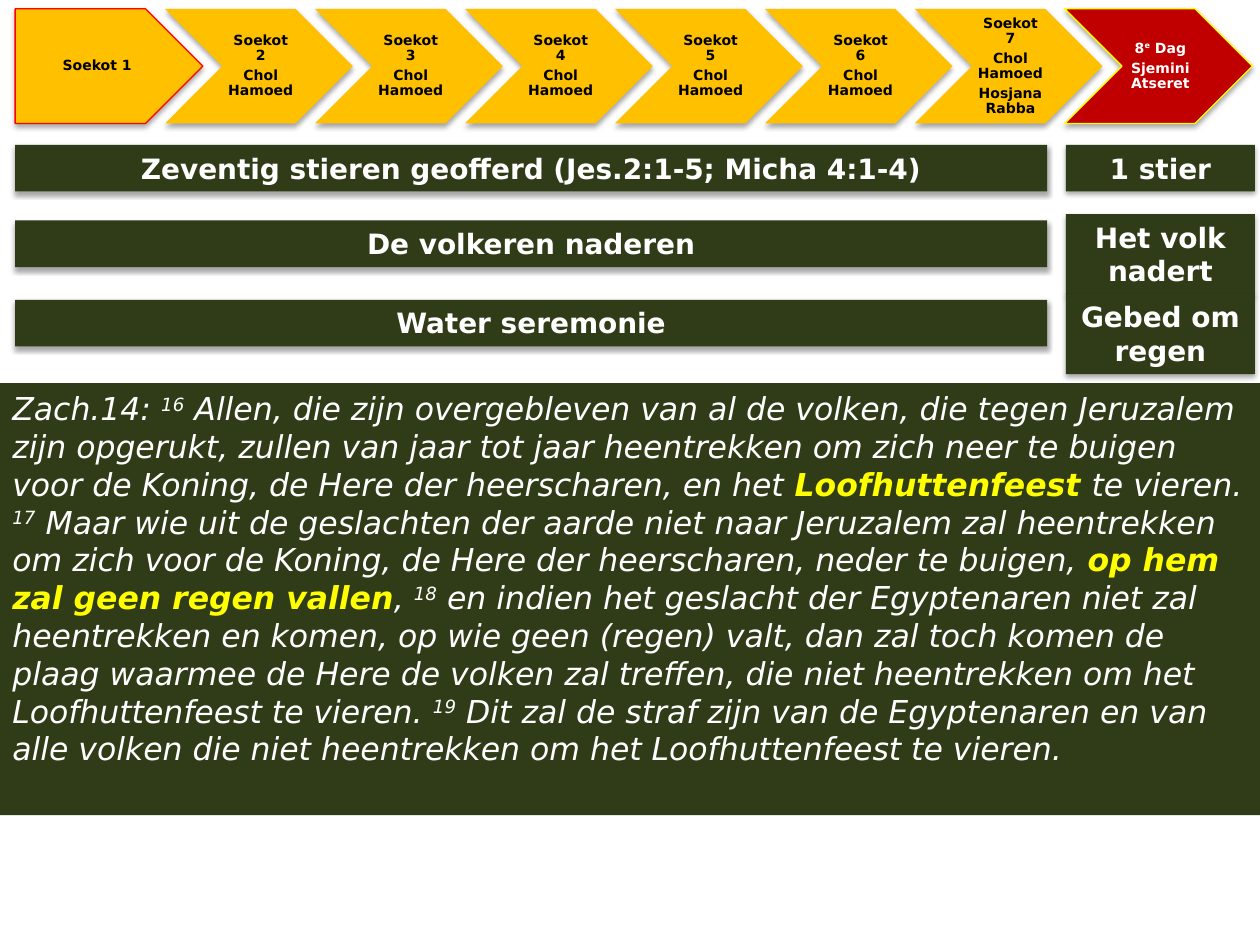
from dataclasses import dataclass

from lxml import etree
from pptx import Presentation
from pptx.dml.color import RGBColor
from pptx.enum.shapes import MSO_SHAPE as Shape
from pptx.enum.text import MSO_ANCHOR as Anchor, PP_ALIGN as Align
from pptx.oxml.ns import qn
from pptx.util import Inches, Pt


@dataclass(frozen=True)
class Theme:
    font: str = "DejaVu Sans"
    gold: str = "FFC000"
    crimson: str = "C00000"
    red: str = "FF0000"
    yellow: str = "FFFF00"
    olive: str = "303C18"
    white: str = "FFFFFF"
    black: str = "000000"
    day_size: int = 8
    bar_size: int = 16
    verse_size: int = 18


THEME = Theme()
MARGIN = 0.12
DAY_WIDTH, DAY_HEIGHT, DAY_STEP = 1.49, 0.91, 1.19
BAR_WIDTH = 8.19
SIDE_LEFT, SIDE_WIDTH = 8.46, 1.5

# Paragraphs of each feast day; a tuple holds runs, "^" marks a superscript run.
DAYS = [
    [("Soekot 1",)],
    *[[(f"Soekot {day}",), ("Chol Hamoed",)] for day in range(2, 7)],
    [("Soekot 7",), ("Chol Hamoed",), ("Hosjana Rabba",)],
    [("8", "^e", " Dag"), ("Sjemini Atseret",)],
]

# (top, height, text) for the seven days and for the eighth day
WEEK_BARS = [
    (1.15, 0.37, "Zeventig stieren geofferd (Jes.2:1-5; Micha 4:1-4)"),
    (1.75, 0.37, "De volkeren naderen"),
    (2.38, 0.37, "Water seremonie"),
]
EIGHTH_DAY_BARS = [
    (1.15, 0.37, "1 stier"),
    (1.7, 0.64, "Het volk nadert"),
    (2.33, 0.64, "Gebed om regen"),
]

# "^" marks a verse number, "*" a stressed passage
PROPHECY = [
    "Zach.14: ",
    "^16",
    " Allen, die zijn overgebleven van al de volken, die tegen Jeruzalem zijn "
    "opgerukt, zullen van jaar tot jaar heentrekken om zich neer te buigen voor "
    "de Koning, de Here der heerscharen, en het ",
    "*Loofhuttenfeest ",
    "te vieren. ",
    "^17",
    " Maar wie uit de geslachten der aarde niet naar Jeruzalem zal heentrekken "
    "om zich voor de Koning, de Here der heerscharen, neder te buigen, ",
    "*op hem zal geen regen vallen",
    ", ",
    "^18",
    " en indien het geslacht der Egyptenaren niet zal heentrekken en komen, op "
    "wie geen (regen) valt, dan zal toch komen de plaag waarmee de Here de volken "
    "zal treffen, die niet heentrekken om het Loofhuttenfeest te vieren. ",
    "^19",
    " Dit zal de straf zijn van de Egyptenaren en van alle volken die niet "
    "heentrekken om het Loofhuttenfeest te vieren.",
]


def add_soft_shadow(shape):
    effects = shape._element.spPr.find(qn("a:effectLst"))
    shadow = etree.SubElement(
        effects, qn("a:outerShdw"), blurRad=str(Pt(3.1)), dist=str(Pt(1.8)),
        dir="5400000", rotWithShape="0")
    color = etree.SubElement(shadow, qn("a:srgbClr"), val=THEME.black)
    etree.SubElement(color, qn("a:alpha"), val="35000")


def add_panel(slide, kind, box, fill, outline=None, shadow=True):
    panel = slide.shapes.add_shape(kind, *map(Inches, box))
    panel.fill.solid()
    panel.fill.fore_color.rgb = RGBColor.from_string(fill)
    if outline:
        panel.line.color.rgb = RGBColor.from_string(outline)
        panel.line.width = Pt(0.75)
    else:
        panel.line.fill.background()
    panel.shadow.inherit = False
    if shadow:
        add_soft_shadow(panel)
    panel.text_frame.word_wrap = True
    panel.text_frame.vertical_anchor = Anchor.TOP
    return panel


def add_run(paragraph, text, size, color, bold=False, italic=False):
    run = paragraph.add_run()
    run.text = text.lstrip("^*")
    font = run.font
    font.name, font.size = THEME.font, Pt(size)
    font.bold, font.italic = bold, italic
    font.color.rgb = RGBColor.from_string(color)
    if text.startswith("^"):
        run._r.get_or_add_rPr().set("baseline", "30000")


def add_day(slide, index, paragraphs):
    first, last = index == 0, index == len(DAYS) - 1
    outline = THEME.red if first else THEME.yellow if last else None
    arrow = add_panel(
        slide, Shape.PENTAGON if first else Shape.CHEVRON,
        (MARGIN + index * DAY_STEP, 0.07, DAY_WIDTH, DAY_HEIGHT),
        THEME.crimson if last else THEME.gold, outline)
    frame = arrow.text_frame
    frame.vertical_anchor = Anchor.MIDDLE
    frame.margin_left = Inches(0.05 if first else 0.04)
    frame.margin_right = Inches(0.01)
    frame.margin_top = frame.margin_bottom = Inches(0.02)
    for number, runs in enumerate(paragraphs):
        paragraph = frame.add_paragraph() if number else frame.paragraphs[0]
        paragraph.alignment = Align.CENTER
        paragraph.line_spacing = 0.9
        paragraph.space_after = Pt(2.8)
        for text in runs:
            add_run(paragraph, text, THEME.day_size,
                    THEME.white if last else THEME.black, bold=True)


def add_bar(slide, left, width, top, height, text):
    bar = add_panel(slide, Shape.RECTANGLE, (left, top, width, height), THEME.olive)
    paragraph = bar.text_frame.paragraphs[0]
    paragraph.alignment = Align.CENTER
    add_run(paragraph, text, THEME.bar_size, THEME.white, bold=True)


def add_prophecy(slide):
    panel = add_panel(slide, Shape.RECTANGLE, (0, 3.04, 10, 3.43),
                      THEME.olive, shadow=False)
    paragraph = panel.text_frame.paragraphs[0]
    paragraph.alignment = Align.LEFT
    for text in PROPHECY:
        stressed = text.startswith("*")
        add_run(paragraph, text, THEME.verse_size,
                THEME.yellow if stressed else THEME.white,
                bold=stressed, italic=True)


def main():
    deck = Presentation()
    deck.slide_width, deck.slide_height = Inches(10), Inches(7.5)
    slide = deck.slides.add_slide(deck.slide_layouts[6])
    for index, paragraphs in enumerate(DAYS):
        add_day(slide, index, paragraphs)
    for week_bar, eighth_day_bar in zip(WEEK_BARS, EIGHTH_DAY_BARS):
        add_bar(slide, MARGIN, BAR_WIDTH, *week_bar)
        add_bar(slide, SIDE_LEFT, SIDE_WIDTH, *eighth_day_bar)
    add_prophecy(slide)
    deck.save("out.pptx")


if __name__ == "__main__":
    main()
